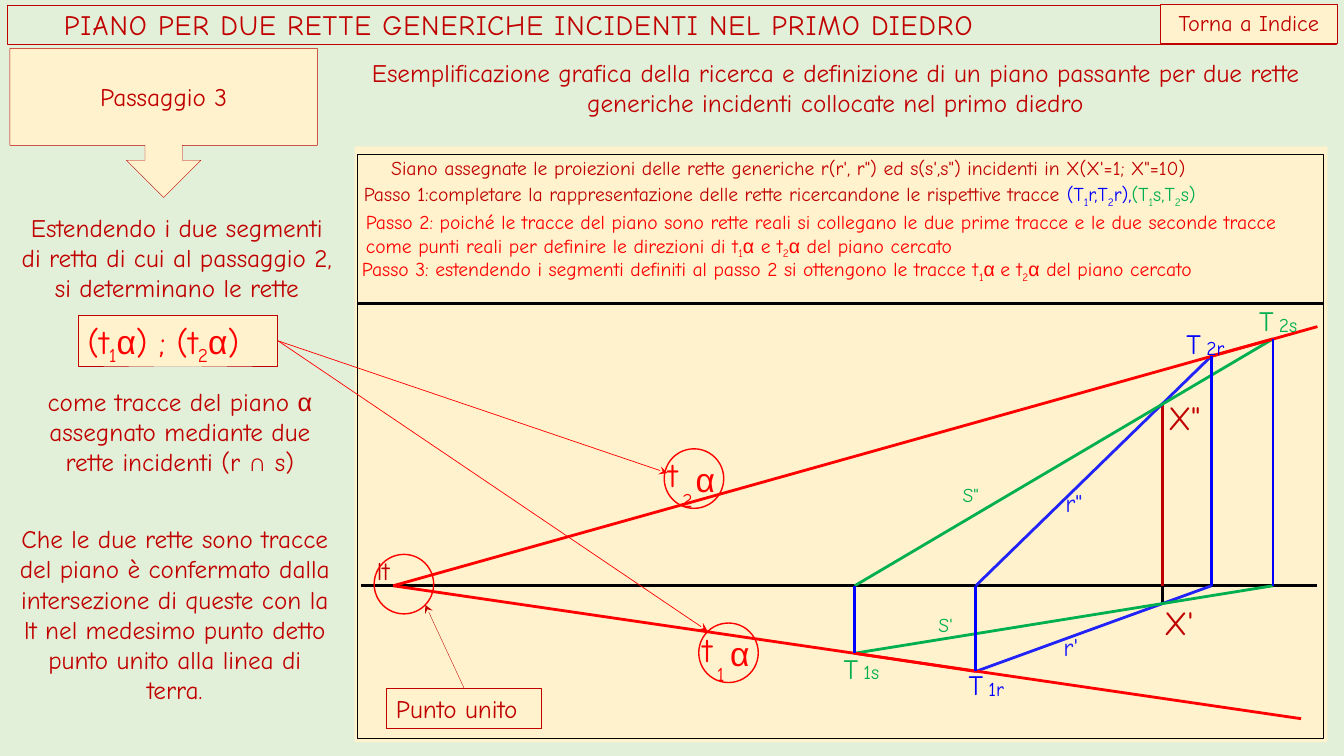
from dataclasses import dataclass

from lxml import etree
from pptx import Presentation
from pptx.dml.color import RGBColor
from pptx.enum.shapes import MSO_CONNECTOR, MSO_SHAPE
from pptx.enum.text import MSO_ANCHOR, MSO_AUTO_SIZE, PP_ALIGN
from pptx.oxml.ns import qn
from pptx.util import Cm, Pt

STRAIGHT = MSO_CONNECTOR.STRAIGHT
RECT, OVAL, CALLOUT = MSO_SHAPE.RECTANGLE, MSO_SHAPE.OVAL, MSO_SHAPE.DOWN_ARROW_CALLOUT
TOP, MIDDLE = MSO_ANCHOR.TOP, MSO_ANCHOR.MIDDLE
LEFT, CENTER = PP_ALIGN.LEFT, PP_ALIGN.CENTER
GROW, FIXED = MSO_AUTO_SIZE.SHAPE_TO_FIT_TEXT, MSO_AUTO_SIZE.NONE

COLORS = {"mint": "E2F0D9", "cream": "FFF2CC", "dark": "C00000", "red": "FF0000",
          "blue": "0000FF", "indigo": "2123F9", "green": "00B050", "black": "000000"}
SYMBOLS = "α∩"


@dataclass
class Box:
    """Region in centimetres in which parts are placed."""
    left: float
    top: float
    width: float
    height: float

    def at(self, x, y, *size):
        """Turn a place inside the region into slide lengths."""
        return [Cm(self.left + x), Cm(self.top + y), *map(Cm, size)]


def rgb(name):
    """Look up a named colour."""
    return RGBColor.from_string(COLORS[name])


def write(shape, text, size=18, color="dark", align=LEFT, anchor=TOP, wrap=True,
          fit=GROW, inset=True, indent=0, tracking=0):
    """Write spans parted by bars; an underscore starts a subscript, a name and colon a colour."""
    frame = shape.text_frame
    frame.word_wrap, frame.auto_size, frame.vertical_anchor = wrap, fit, anchor
    across, down = (0.25, 0.13) if inset else (0, 0)
    frame.margin_left, frame.margin_right = Cm(across + indent), Cm(across)
    frame.margin_top = frame.margin_bottom = Cm(down)
    para = frame.paragraphs[0]
    para.alignment = align
    for piece in text.split("|"):
        if piece in COLORS:
            color = piece
            continue
        span = para.add_run()
        span.text = piece.removeprefix("_")
        span.font.name = "Arial" if piece[0] in SYMBOLS else "Comic Neue"
        span.font.size, span.font.color.rgb = Pt(size), rgb(color)
        if piece.startswith("_"):
            span.font._element.set("baseline", "-25000")
        if tracking:
            span.font._element.set("spc", str(tracking))


def add_panel(page, place, kind=RECT, fill=None, line=None, width=0.25):
    """Add a preset shape with an optional fill and outline."""
    shape = page.shapes.add_shape(kind, *place)
    shape.shadow.inherit = False
    if fill:
        shape.fill.solid()
        shape.fill.fore_color.rgb = rgb(fill)
    else:
        shape.fill.background()
    if line:
        shape.line.color.rgb, shape.line.width = rgb(line), Pt(width)
    else:
        shape.line.fill.background()
    return shape


def add_text(page, place, text, **style):
    """Add a text box."""
    write(page.shapes.add_textbox(*place), text, **style)


def add_label(page, place, text, **style):
    """Add a tight text box that does not wrap."""
    add_text(page, place, text, wrap=False, inset=False, **style)


def add_line(page, box, start, end, color, width=0, arrow=False):
    """Add a straight line, with an arrowhead at its end if asked."""
    line = page.shapes.add_connector(STRAIGHT, *box.at(*start), *box.at(*end))
    line.line.color.rgb, line.line.width = rgb(color), Pt(width)
    properties = line.element.spPr
    if arrow:
        etree.SubElement(properties.find(qn("a:ln")), qn("a:tailEnd"), type="stealth")
    etree.SubElement(properties, qn("a:effectLst"))


def add_header(page, box):
    """Place the title bar, index button and subtitle."""
    title = add_panel(page, box.at(0, 0, box.width, 0.99), line="dark")
    write(title, "PIANO PER DUE RETTE GENERICHE INCIDENTI NEL PRIMO DIEDRO", size=20,
          anchor=MIDDLE, fit=FIXED, indent=1.18, tracking=65)
    button = add_panel(page, box.at(29.06, -0.03, 4.47, 0.99), fill="cream", line="dark")
    write(button, "Torna a Indice", size=16, align=CENTER)
    add_text(page, box.at(8.38, 1.19, 24.99, 1.8),
             "Esemplificazione grafica della ricerca e definizione di un piano passante "
             "per due rette generiche incidenti collocate nel primo diedro", align=CENTER)


def add_explanation(page, box):
    """Place the step callout and the explanation below it."""
    callout = add_panel(page, box.at(0, 0, 7.75, 3.76), CALLOUT, "cream", "dark")
    write(callout, "Passaggio 3", align=CENTER, anchor=MIDDLE, fit=FIXED)
    paragraphs = [
        (0, 3.99, 8.41, 2.57, "Estendendo i due segmenti di retta di cui al passaggio 2, "
                              "si determinano le rette"),
        (0, 11.84, 8.31, 5.64, "Che le due rette sono tracce del piano è confermato dalla "
                               "intersezione di queste con la lt nel medesimo punto detto "
                               "punto unito alla linea di terra."),
        (0.13, 8.38, 8.31, 2.57, "come tracce del piano |α |assegnato mediante due rette "
                                 "incidenti (r |∩| s)")]
    for *place, text in paragraphs:
        add_text(page, box.at(*place), text, align=CENTER)
    formula = add_panel(page, box.at(1.71, 6.73, 5.03, 1.27), fill="cream", line="dark")
    write(formula, "(t|_1|α|) ; (t|_2|α|)", size=24, color="red")


def add_steps(page, box):
    """Place the statement and the three construction steps."""
    add_label(page, box.at(0.84, 0.05, 22.56, 0.61),
              "Siano assegnate le proiezioni delle rette generiche r(r', r\") ed s(s',s\") "
              "incidenti in X(X'=1; X\"=10)", size=14)
    add_text(page, box.at(-0.05, 1.27, 24.31, 1.45),
             "Passo 2: poiché le tracce del piano sono rette reali si collegano le due prime "
             "tracce e le due seconde tracce come punti reali per definire le direzioni di "
             "t|_1|α| e t|_2|α| del piano cercato", size=14, color="red")
    first = add_panel(page, box.at(0.15, 0.69, 23.8, 0.61), fill="cream")
    write(first, "Passo 1:completare la rappresentazione delle rette ricercandone le "
                 "rispettive tracce |blue|(T|_1|r,T|_2|r),|green|(T|_1|s,T|_2|s)",
          size=14, inset=False)
    add_text(page, box.at(0.1, 2.59, 23.62, 0.61),
             "Passo 3: estendendo i segmenti definiti al passo 2 si ottengono le tracce "
             "t|_1|α |e t|_2|α| del piano cercato", size=14, color="red", inset=False)


def add_construction(page, box):
    """Draw the projections, the traces and their labels."""
    ground = 10.87
    t1s, t1r, t2r, t2s = (12.52, 12.57), (15.57, 13.03), (21.51, 5.08), (23.06, 4.65)
    x1, x2, joint = (20.27, 11.33), (20.27, 6.3), (0.89, ground)
    lines = [((0, 3.76), (box.width, 3.76), "black"),
             ((0.08, ground), (24.16, ground), "black"),
             ((x1[0], ground), x1, "black"), ((x2[0], ground), x2, "dark"),
             (t2r, (t1r[0], ground), "indigo"), (t1r, (t2r[0], ground), "indigo"),
             (t1s, (t2s[0], ground), "green"), (t2s, (t1s[0], ground), "green"),
             (t2r, t2s, "red"), (t1s, t1r, "red"),
             (joint, (24.18, 4.34), "red"), (joint, (23.77, 14.22), "red")]
    lines += [((point[0], ground), point, "blue") for point in (t1s, t1r, t2r, t2s)]
    for start, end, color in lines:
        add_line(page, box, start, end, color)

    for x, y, mark, color in [(15.39, 12.93, "1r", "blue"), (20.88, 4.34, "2r", "blue"),
                              (12.24, 12.52, "1s", "green"), (22.71, 3.76, "2s", "green")]:
        add_label(page, box.at(x, y, 0.48, 0.86), "T", size=20, color=color)
        add_label(page, box.at(x + 0.5, y + 0.23, 0.5, 0.61), mark, size=14, color=color)
    for x, y, width, text, size, color in [
            (0.48, 10.11, 0.48, "lt", 18, "dark"),
            (20.32, 11.28, 0.97, "X'", 24, "dark"), (20.42, 6.12, 0.99, "X\"", 24, "dark"),
            (14.63, 11.56, 0.53, "S'", 14, "green"), (15.24, 8.28, 0.56, "S\"", 14, "green"),
            (17.78, 12.01, 0.56, "r'", 18, "indigo"), (17.83, 8.38, 0.58, "r\"", 18, "indigo")]:
        add_label(page, box.at(x, y, width, size * 0.042), text, size=size, color=color)


def add_marks(page, box):
    """Circle the traces and the joint point and point arrows at them."""
    for x, y, index in [(8.59, 11.81, "1"), (7.72, 7.42, "2"), (0.41, 10.08, None)]:
        add_panel(page, box.at(x, y, 1.5, 1.5), OVAL, line="red", width=1)
        if index:
            for dx, dy, text in [(0.1, 0.14, "t"), (0.46, 0.42, "_" + index), (0.79, 0.25, "α")]:
                add_label(page, box.at(x + dx, y + dy, 0.4, 0.9), text, size=24, color="red")
    for target in [(7.8, 8.03), (8.81, 12.01)]:
        add_line(page, box, (-2.01, 4.7), target, "red", 0.5, arrow=True)
    note = add_panel(page, box.at(0.71, 13.44, 3.91, 1.02), line="dark")
    write(note, "Punto unito")
    add_line(page, box, (2.67, 13.44), (1.7, 11.35), "dark", 0.25, arrow=True)


def add_diagram(page, box):
    """Place the framed drawing with its text."""
    add_panel(page, box.at(-0.08, -0.2, box.width + 0.18, box.height + 0.3), fill="cream")
    add_panel(page, box.at(0, 0, box.width, box.height), line="black", width=0)
    add_steps(page, box)
    add_construction(page, box)
    add_marks(page, box)


def main():
    """Build and save the slide."""
    deck = Presentation()
    deck.slide_width, deck.slide_height = Cm(33.87), Cm(19.05)
    page = deck.slides.add_slide(deck.slide_layouts[6])
    page.background.fill.solid()
    page.background.fill.fore_color.rgb = rgb("mint")
    add_header(page, Box(0.18, 0.13, 33.5, 3))
    add_explanation(page, Box(0.25, 1.22, 8.41, 17.48))
    add_diagram(page, Box(9.02, 3.89, 24.33, 14.71))
    deck.save("out.pptx")


if __name__ == "__main__":
    main()
